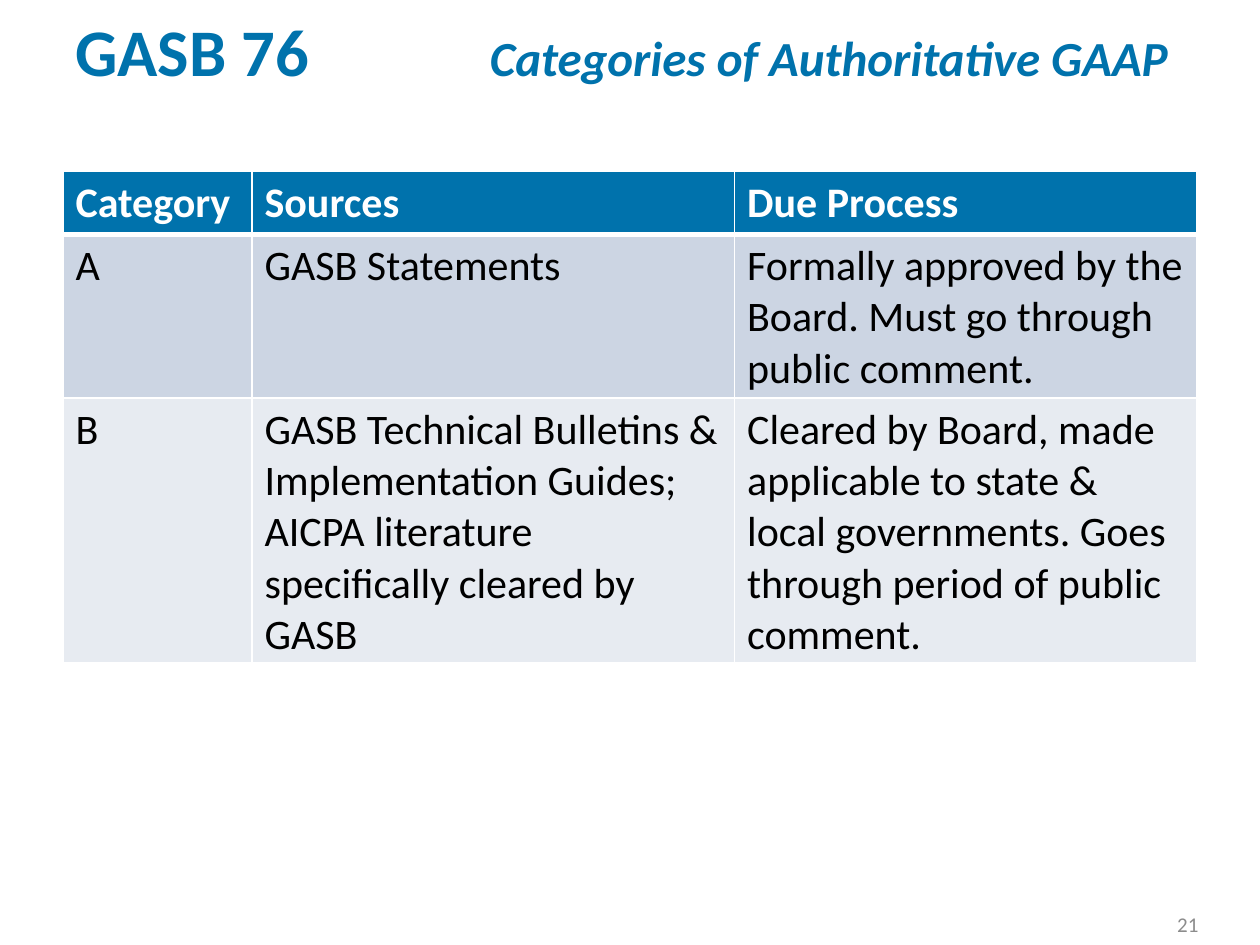
from lxml import etree
from pptx import Presentation
from pptx import util as u
from pptx.dml.color import RGBColor
from pptx.enum import text
from pptx.oxml import parse_xml
from pptx.oxml.ns import nsdecls

COLORS = {"blue": "0072AC", "white": "FFFFFF", "black": "000000",
          "row_a": "CCD5E3", "row_b": "E7EBF1", "number": "8C8C8C"}
FONT = "Calibri"


def style(run, size, color, bold=False, italic=False):
    run.font.name = FONT
    run.font.size = u.Pt(size)
    run.font.bold = bold
    run.font.italic = italic
    run.font.color.rgb = RGBColor.from_string(COLORS[color])


def add_text(left, top, width, height, content):
    text_frame = slide.shapes.add_textbox(
        u.Inches(left), u.Inches(top), u.Inches(width), u.Inches(height)).text_frame
    text_frame.word_wrap = True
    text_frame.vertical_anchor = text.MSO_ANCHOR.MIDDLE
    text_frame.text = content
    return text_frame.paragraphs[0]


presentation = Presentation()
presentation.slide_width = u.Inches(10)
presentation.slide_height = u.Inches(7.5)
slide = presentation.slides.add_slide(presentation.slide_layouts[6])
margin = 0.5
content_width = 10 - 2 * margin

# Slide number
number = add_text(7.04, 7.17, 2.57, 0.33, "21")
number.alignment = text.PP_ALIGN.RIGHT
style(number.runs[0], 12, "number")

# Table: header row, then one row for each category
rows = [
    ("Category", "Sources", "Due Process"),
    ("A", "GASB Statements",
     "Formally approved by the Board. Must go through public comment."),
    ("B", "GASB Technical Bulletins & Implementation Guides;\n"
          "AICPA literature specifically cleared by GASB",
     "Cleared by Board, made applicable to state & local governments. "
     "Goes through period of public comment."),
]
row_fills = ["blue", "row_a", "row_b"]
column_widths = [1.5, 3.83, 3.67]
row_heights = [0.5, 1.3, 2.1]

table = slide.shapes.add_table(
    len(rows), len(column_widths), u.Inches(margin), u.Inches(1.36),
    u.Inches(content_width), u.Inches(sum(row_heights))).table
for column, width in zip(table.columns, column_widths):
    column.width = u.Inches(width)
for row, height in zip(table.rows, row_heights):
    row.height = u.Inches(height)

for row_index, contents in enumerate(rows):
    header = row_index == 0
    for column_index, content in enumerate(contents):
        cell = table.cell(row_index, column_index)
        cell.text_frame.text = content
        for paragraph in cell.text_frame.paragraphs:
            style(paragraph.runs[0], 24, "white" if header else "black", bold=header)
        cell.fill.solid()
        cell.fill.fore_color.rgb = RGBColor.from_string(COLORS[row_fills[row_index]])

        # White borders, with a heavier rule below the header
        properties = cell._tc.get_or_add_tcPr()
        for position, side in enumerate(["lnL", "lnR", "lnT", "lnB"]):
            heavy = (header and side == "lnB") or (row_index == 1 and side == "lnT")
            border = parse_xml(f'<a:{side} {nsdecls("a")} w="{u.Pt(3 if heavy else 1)}">'
                               f'<a:solidFill><a:srgbClr val="{COLORS["white"]}"/>'
                               f'</a:solidFill></a:{side}>')
            properties.insert(position, border)

# Title with its subtitle set at a tab stop
title = add_text(margin, 0, content_width, 0.79, "")
tab_list = parse_xml(f'<a:tabLst {nsdecls("a")}>'
                     f'<a:tab pos="{u.Inches(3.29)}" algn="l"/></a:tabLst>')
title._p.get_or_add_pPr().append(tab_list)
for content, size, italic in [("GASB 76\t", 38, False),
                              ("Categories of Authoritative GAAP", 28, True)]:
    run = title.add_run()
    run.text = content
    style(run, size, "blue", bold=True, italic=italic)

presentation.save("out.pptx")
